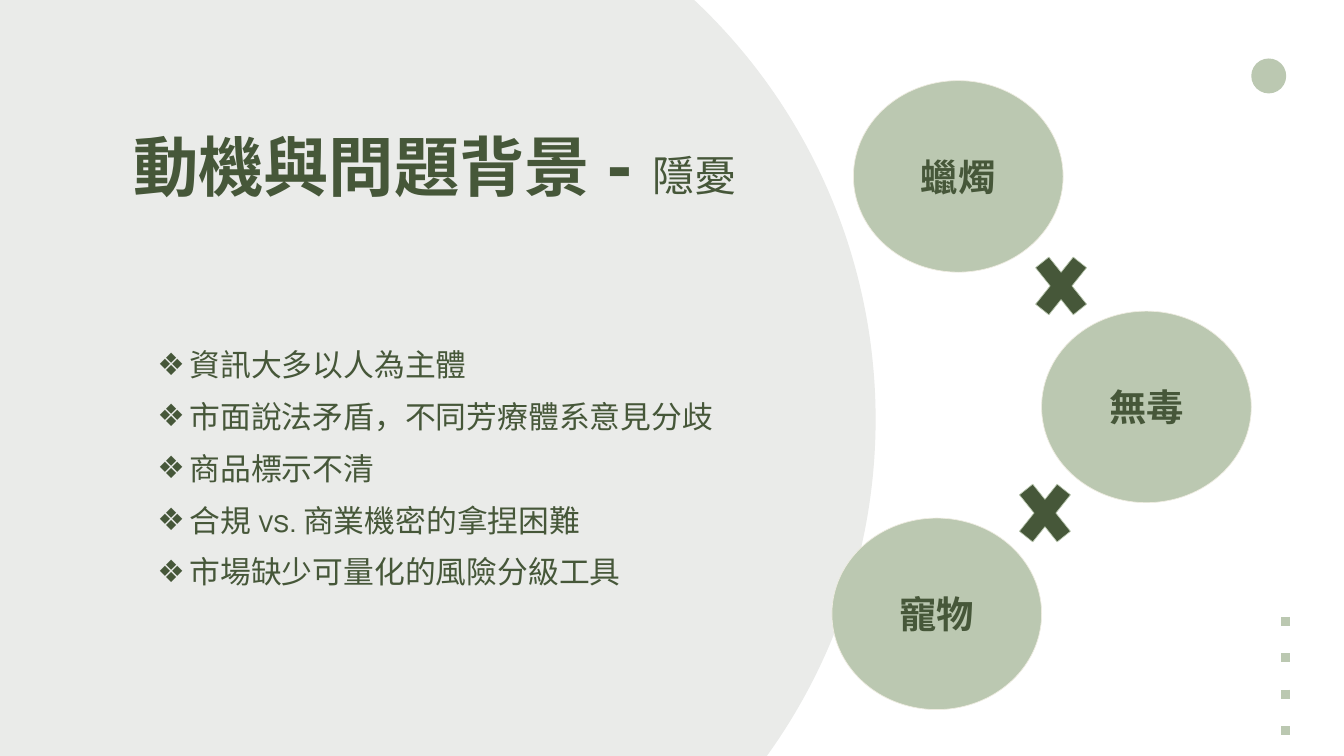
from lxml.etree import SubElement
from pptx import Presentation
from pptx.dml.color import RGBColor
from pptx.enum.dml import MSO_LINE
from pptx.enum.shapes import MSO_CONNECTOR, MSO_SHAPE
from pptx.enum.text import MSO_ANCHOR as ANCHOR, MSO_AUTO_SIZE as AUTO, PP_ALIGN as ALIGN
from pptx.oxml.ns import qn
from pptx.util import Pt

PX = 9144  # 100 px to the inch
WIDTH, HEIGHT = 2000, 1125
GREEN, SAGE, PALE, CREAM = "465739", "BBC8B1", "EAEBE9", "EEECE1"

TITLE = [("動機與問題背景", 70, True), (" - ", 80, True), ("隱憂", 45, False)]
CONCERNS = [
    "資訊大多以人為主體",
    "市面說法矛盾，不同芳療體系意見分歧",
    "商品標示不清",
    "合規 vs. 商業機密的拿捏困難",
    "市場缺少可量化的風險分級工具",
]
TOPICS = [("蠟燭", 32, 0), ("無毒", 312, 343), ("寵物", 0, 651)]
CROSSES = [(287, 238), (263, 576)]


def color(hex_string):
    return RGBColor.from_string(hex_string)


def px(*lengths):
    return [length * PX for length in lengths]


def add_text(paragraph, text, size, font="Manrope", bold=False, fill=GREEN):
    run = paragraph.add_run()
    run.text = text
    run.font.size, run.font.name, run.font.bold = Pt(size), font, bold
    run.font.color.rgb = color(fill)


def add_figure(slide, kind, box, fill, line=None):
    shape = slide.shapes.add_shape(kind, *px(*box))
    shape.shadow.inherit = False
    shape.fill.solid()
    shape.fill.fore_color.rgb = color(fill)
    if line:
        shape.line.color.rgb = color(line)
        shape.line.width = Pt(0.75)
    else:
        shape.line.fill.background()
    return shape


def prepare_frame(frame):
    frame.margin_left = frame.margin_right = frame.margin_top = frame.margin_bottom = 0
    frame.word_wrap = True
    frame.auto_size = AUTO.SHAPE_TO_FIT_TEXT
    frame.vertical_anchor = ANCHOR.TOP


def add_bullet(paragraph, mark):
    properties = paragraph._p.get_or_add_pPr()
    properties.set("marL", str(50 * PX))
    properties.set("indent", str(-48 * PX))
    bullet_color = SubElement(properties, qn("a:buClr"))
    SubElement(bullet_color, qn("a:srgbClr"), val=GREEN)
    SubElement(properties, qn("a:buFont"), typeface="Arial")
    SubElement(properties, qn("a:buChar"), char=mark)


def draw_backdrop(slide):
    # Large pale disc, small corner dot and dotted edge line
    add_figure(slide, MSO_SHAPE.OVAL, (-409, -232, 1712, 1712), PALE)
    add_figure(slide, MSO_SHAPE.OVAL, (1862, 87, 52, 52), SAGE)
    line = slide.shapes.add_connector(MSO_CONNECTOR.STRAIGHT, *px(1913, 918, 1913, 1203))
    line.line.color.rgb = color(SAGE)
    line.line.width = Pt(9.75)
    line.line.dash_style = MSO_LINE.ROUND_DOT
    dash = line.line._ln.find(qn("a:prstDash"))
    dash.set("val", "dot")
    SubElement(line._element.spPr, qn("a:effectLst"))


def draw_concerns(slide, left, top, width, height):
    frame = slide.shapes.add_textbox(*px(left, top, width, height)).text_frame
    prepare_frame(frame)
    for index, concern in enumerate(CONCERNS):
        paragraph = frame.add_paragraph() if index else frame.paragraphs[0]
        paragraph.alignment = ALIGN.JUSTIFY
        paragraph.line_spacing = 1.4
        add_bullet(paragraph, "❖")
        add_text(paragraph, concern, size=33)


def draw_topics(slide, left, top):
    # Labelled ellipses
    for label, x, y in TOPICS:
        shape = add_figure(slide, MSO_SHAPE.OVAL, (left + x, top + y, 312, 285), SAGE, CREAM)
        frame = shape.text_frame
        frame.margin_left = frame.margin_right = 10 * PX
        frame.margin_top = frame.margin_bottom = 10 * PX
        frame.vertical_anchor = ANCHOR.MIDDLE
        frame.paragraphs[0].alignment = ALIGN.CENTER
        add_text(frame.paragraphs[0], label, size=40, bold=True)
    # Crosses between them
    for x, y in CROSSES:
        box = (left + x, top + y, 108, 135)
        add_figure(slide, MSO_SHAPE.MATH_MULTIPLY, box, GREEN, SAGE)


def draw_title(slide, left, top, width, height):
    title = slide.shapes.title
    title.left, title.top, title.width, title.height = px(left, top, width, height)
    prepare_frame(title.text_frame)
    paragraph = title.text_frame.paragraphs[0]
    paragraph.alignment = ALIGN.LEFT
    paragraph.line_spacing = 1.4
    for text, size, bold in TITLE:
        add_text(paragraph, text, size=size, font="Arial", bold=bold)
    # Bring the title to the front
    slide.shapes._spTree.append(title._element)


def main():
    presentation = Presentation()
    presentation.slide_width, presentation.slide_height = px(WIDTH, HEIGHT)
    slide = presentation.slides.add_slide(presentation.slide_layouts[5])
    draw_backdrop(slide)
    draw_concerns(slide, 232, 493, 902, 451)
    draw_topics(slide, 1238, 120)
    draw_title(slide, 198, 120, 1389, 135)
    presentation.save("out.pptx")


if __name__ == "__main__":
    main()
